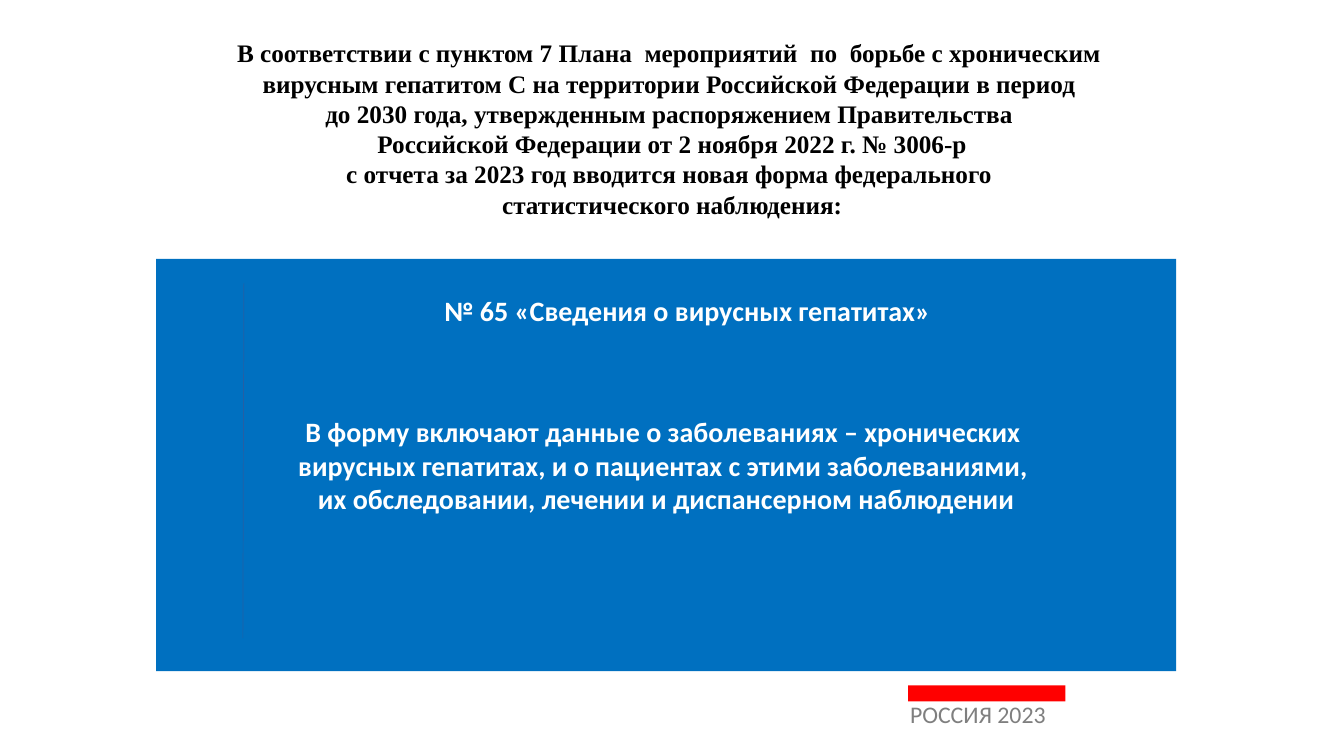
import pptx
import pptx.dml.color
import pptx.enum.shapes
import pptx.enum.text
import pptx.oxml.ns
import pptx.util
from dataclasses import dataclass
from lxml import etree

Pt = pptx.util.Pt
ALIGN = pptx.enum.text.PP_ALIGN
ANCHOR = pptx.enum.text.MSO_ANCHOR


@dataclass(frozen=True)
class Theme:
    blue: str = "0070C0"
    red: str = "FF0000"
    white: str = "FFFFFF"
    black: str = "000000"
    grey: str = "7F7F7F"
    sans: str = "Calibri"
    serif: str = "Times New Roman"
    title_size: int = 18
    body_size: int = 20
    footer_size: int = 17


THEME = Theme()

DECREE = [
    "В соответствии с пунктом 7 Плана  мероприятий  по  борьбе с хроническим ",
    "вирусным гепатитом С на территории Российской Федерации в период ",
    "до 2030 года, утвержденным распоряжением Правительства ",
    "Российской Федерации от 2 ноября 2022 г. № 3006-р",
    "с отчета за 2023 год вводится новая форма федерального ",
    "статистического наблюдения:",
]
CONTENTS = [
    "В форму включают данные о заболеваниях – хронических ",
    "вирусных гепатитах, и о пациентах с этими заболеваниями, \n"
    "их обследовании, лечении и диспансерном наблюдении",
]


def rgb(color):
    return pptx.dml.color.RGBColor.from_string(color)


def add_box(s, left, top, width, height, fill):
    sp = s.shapes.add_shape(pptx.enum.shapes.MSO_SHAPE.RECTANGLE,
                            Pt(left), Pt(top), Pt(width), Pt(height))
    sp.shadow.inherit = False
    sp.fill.solid()
    sp.fill.fore_color.rgb = rgb(fill)
    sp.line.fill.background()
    return sp


def add_label(s, left, top, width, height):
    return s.shapes.add_textbox(Pt(left), Pt(top), Pt(width), Pt(height))


def write(sp, paragraphs, font, size, color, bold=True,
          align=ALIGN.CENTER, anchor=ANCHOR.MIDDLE, spacing=None):
    tf = sp.text_frame
    tf.word_wrap = True
    tf.vertical_anchor = anchor
    for i, text in enumerate(paragraphs):
        p = tf.add_paragraph() if i else tf.paragraphs[0]
        p.text = text
        p.alignment = align
        p.line_spacing = spacing
        for r in p.runs:
            r.font.name = font
            r.font.size = Pt(size)
            r.font.bold = bold
            r.font.color.rgb = rgb(color)


def add_faint_line(s, x1, y1, x2, y2, color, width, opacity):
    line = s.shapes.add_connector(pptx.enum.shapes.MSO_CONNECTOR.STRAIGHT,
                                  Pt(x1), Pt(y1), Pt(x2), Pt(y2))
    line.line.width = Pt(width)
    line.line.color.rgb = rgb(color)
    qn = pptx.oxml.ns.qn
    sp_pr = line._element.spPr
    tint = sp_pr.find(".//" + qn("a:srgbClr"))
    etree.SubElement(tint, qn("a:alpha")).set("val", str(opacity * 1000))
    etree.SubElement(sp_pr, qn("a:effectLst"))


def main():
    prs = pptx.Presentation()
    prs.slide_width, prs.slide_height = Pt(960), Pt(540)
    s = prs.slides.add_slide(prs.slide_layouts[6])

    # Blue panel with the contents of the form
    panel = add_box(s, 111.6, 185, 728.6, 294.5, THEME.blue)
    write(panel, CONTENTS, THEME.sans, THEME.body_size, THEME.white)

    # Decree that introduces the form
    decree = add_box(s, 120.2, 20.9, 720, 141.8, THEME.white)
    write(decree, DECREE, THEME.serif, THEME.title_size, THEME.black)

    # Footer with its red bar
    footer = add_label(s, 643, 500.4, 135.4, 33.8)
    write(footer, ["РОССИЯ 2023"], THEME.sans, THEME.footer_size, THEME.grey,
          bold=False, align=ALIGN.LEFT, anchor=ANCHOR.TOP, spacing=0.8)
    add_box(s, 648.7, 489.6, 112.3, 11.5, THEME.red)

    # Panel rule and name of the form
    add_faint_line(s, 174.2, 202.3, 173.5, 455.8, THEME.red, 0.5, 15)
    form_name = add_label(s, 173.5, 185, 635, 73)
    write(form_name, ["№ 65 «Сведения о вирусных гепатитах»"],
          THEME.sans, THEME.body_size, THEME.white)

    prs.save("out.pptx")


if __name__ == "__main__":
    main()
